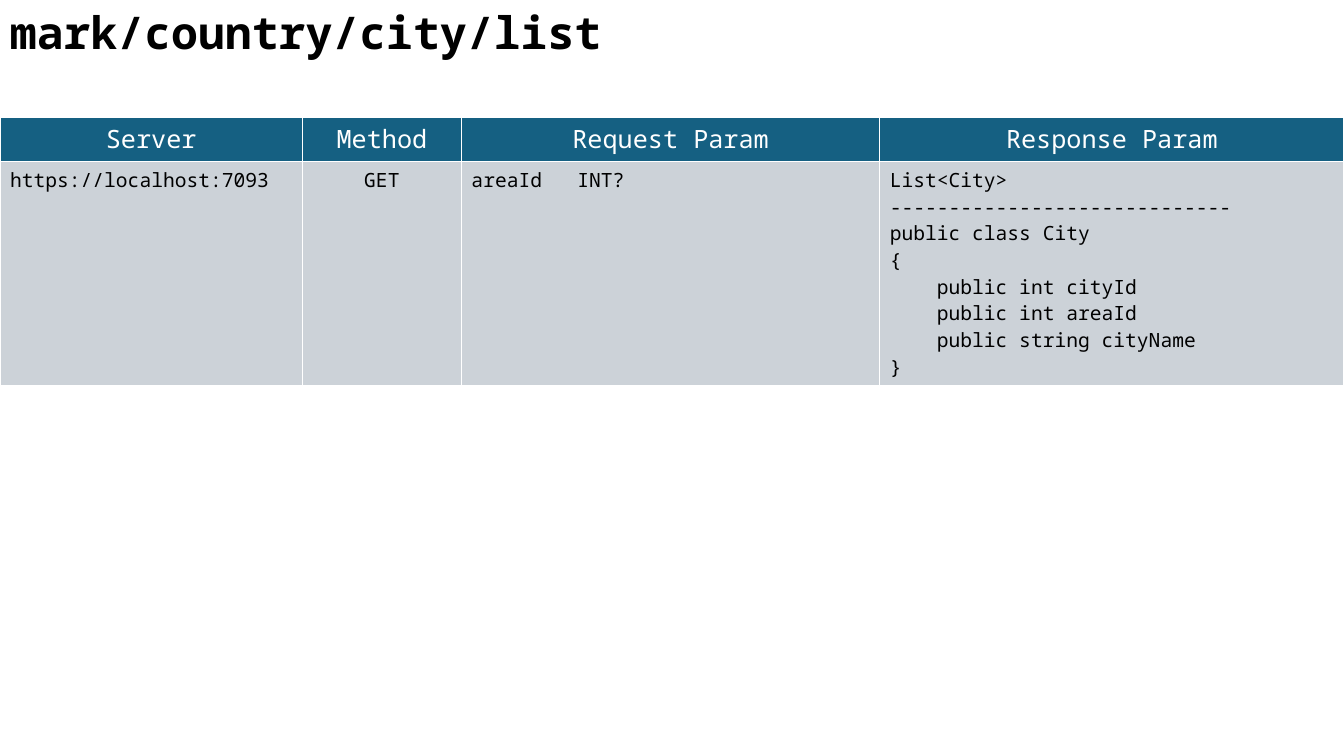
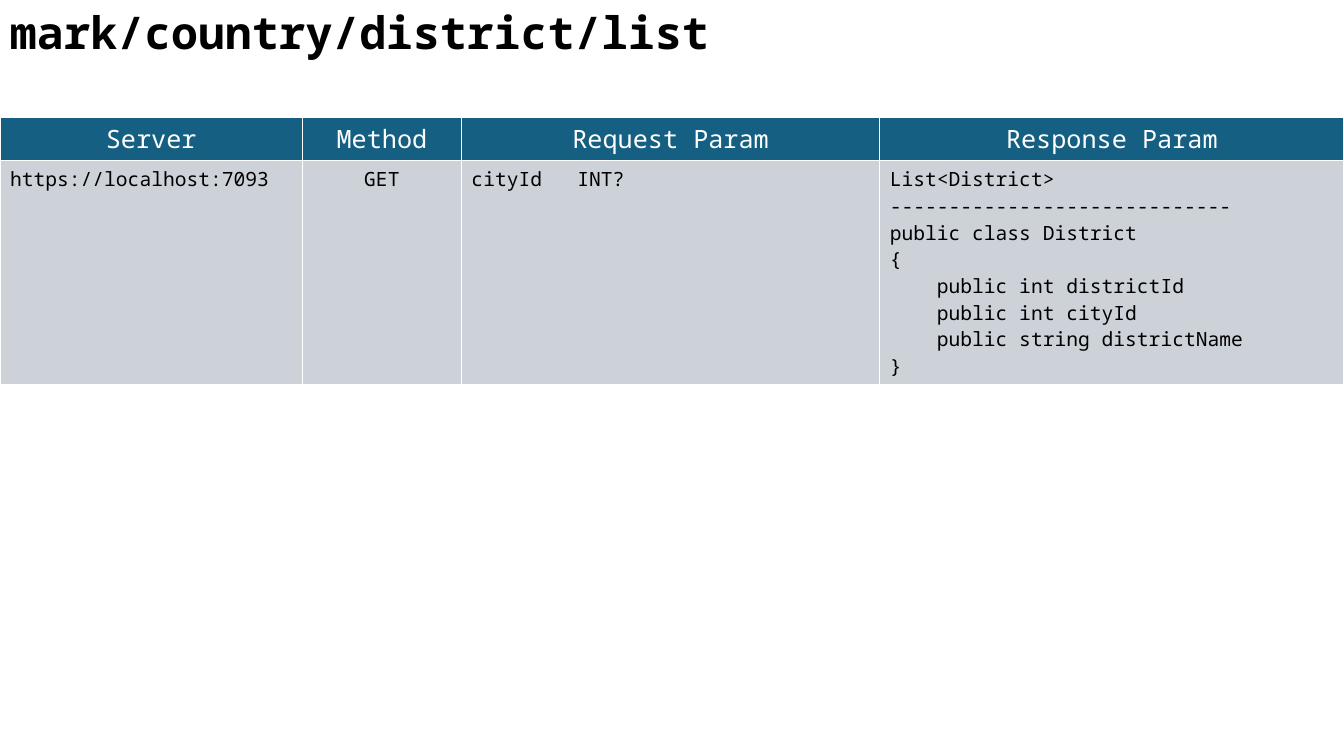
import pptx
import pptx.dml.color
import pptx.enum.text
import pptx.oxml
import pptx.oxml.ns
import pptx.util

Pt = pptx.util.Pt
ALIGN = pptx.enum.text.PP_ALIGN

# Shared style
FONT = "Noto Sans Mono"
COLORS = {"header": "156082", "body": "CCD2D8", "white": "FFFFFF", "text": "000000"}
HEADINGS = ["Server", "Method", "Request Param", "Response Param"]
COLUMN_WIDTHS = [216, 113.6, 298.8, 331.6]
ROW_HEIGHTS = [31.2, 160]
SLIDE_WIDTH, SLIDE_HEIGHT = 960, 540
TABLE_TOP = 83.5
TYPE_TAB = 75.6

# Slide content
ENDPOINTS = [
    {"name": "City", "parent": "area", "title_width": 460},
    {"name": "District", "parent": "city", "title_width": 600.5},
]


def rgb(color):
    return pptx.dml.color.RGBColor.from_string(COLORS[color])


def write_text(frame, text, size, color="text", bold=False, align=ALIGN.LEFT, tab=None):
    """Fill a text frame, one paragraph per line of text."""
    for index, line in enumerate(text.split("\n")):
        para = frame.paragraphs[0] if index == 0 else frame.add_paragraph()
        para.alignment = align
        if tab:
            add_tab_stop(para, tab)
        span = para.add_run()
        span.text = line
        span.font.name = FONT
        span.font.size = Pt(size)
        span.font.bold = bold
        span.font.color.rgb = rgb(color)


def add_tab_stop(para, position):
    properties = para._p.get_or_add_pPr()
    properties.append(pptx.oxml.parse_xml(
        f'<a:tabLst {pptx.oxml.ns.nsdecls("a")}>'
        f'<a:tab pos="{Pt(position)}" algn="l"/></a:tabLst>'))


def style_cell(cell, fill):
    """Give a cell thin white borders and a solid fill."""
    properties = cell._tc.get_or_add_tcPr()
    for side in "LRTB":
        properties.append(pptx.oxml.parse_xml(
            f'<a:ln{side} {pptx.oxml.ns.nsdecls("a")} w="{Pt(1)}"><a:solidFill>'
            f'<a:srgbClr val="{COLORS["white"]}"/></a:solidFill></a:ln{side}>'))
    cell.fill.solid()
    cell.fill.fore_color.rgb = rgb(fill)


def add_title(page, text, width):
    box = page.shapes.add_textbox(Pt(0), Pt(0), Pt(width), Pt(46))
    box.text_frame.word_wrap = True
    box.text_frame.auto_size = pptx.enum.text.MSO_AUTO_SIZE.SHAPE_TO_FIT_TEXT
    write_text(box.text_frame, text, size=32, bold=True)


def add_api_table(page, values):
    table = page.shapes.add_table(
        len(ROW_HEIGHTS), len(HEADINGS), Pt(0), Pt(TABLE_TOP),
        Pt(SLIDE_WIDTH), Pt(sum(ROW_HEIGHTS))).table
    for row, height in zip(table.rows, ROW_HEIGHTS):
        row.height = Pt(height)
    for index, width in enumerate(COLUMN_WIDTHS):
        table.columns[index].width = Pt(width)
        heading, value = table.cell(0, index), table.cell(1, index)
        style_cell(heading, "header")
        write_text(heading.text_frame, HEADINGS[index], size=18, color="white",
                   align=ALIGN.CENTER)
        style_cell(value, "body")
        write_text(value.text_frame, values[index], size=14,
                   align=ALIGN.CENTER if HEADINGS[index] == "Method" else ALIGN.LEFT,
                   tab=TYPE_TAB if "\t" in values[index] else None)


def response_code(name, parent):
    field = name.lower()
    return "\n".join([
        f"List<{name}>",
        "-" * 29,
        f"public class {name}",
        "{",
        f"    public int {field}Id",
        f"    public int {parent}Id",
        f"    public string {field}Name",
        "}",
    ])


def add_endpoint(deck, name, parent, title_width):
    page = deck.slides.add_slide(deck.slide_layouts[6])
    add_api_table(page, ["https://localhost:7093", "GET", f"{parent}Id\tINT?",
                         response_code(name, parent)])
    add_title(page, f"mark/country/{name.lower()}/list", title_width)


def main():
    deck = pptx.Presentation()
    deck.slide_width, deck.slide_height = Pt(SLIDE_WIDTH), Pt(SLIDE_HEIGHT)
    for endpoint in ENDPOINTS:
        add_endpoint(deck, **endpoint)
    deck.save("out.pptx")


if __name__ == "__main__":
    main()
